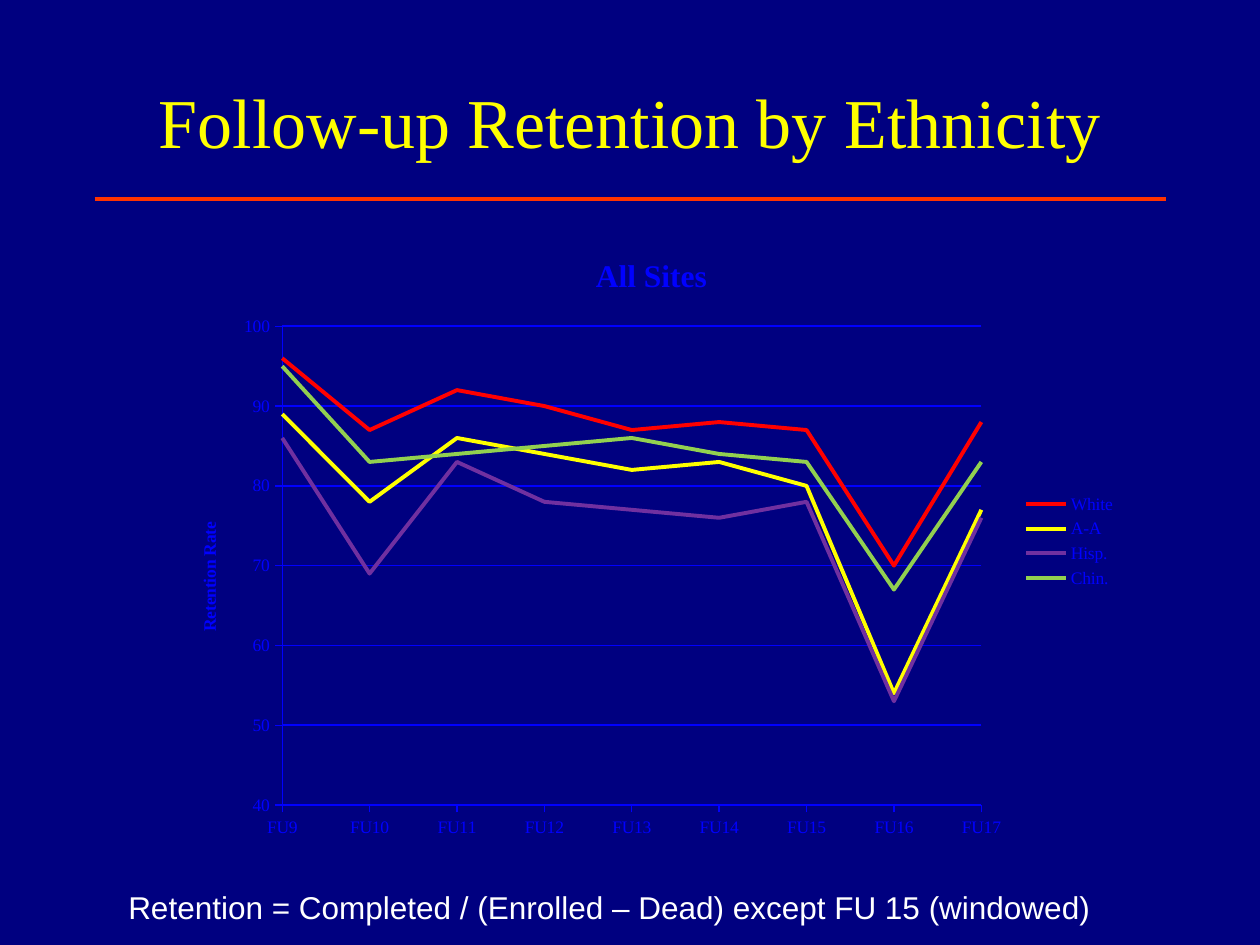
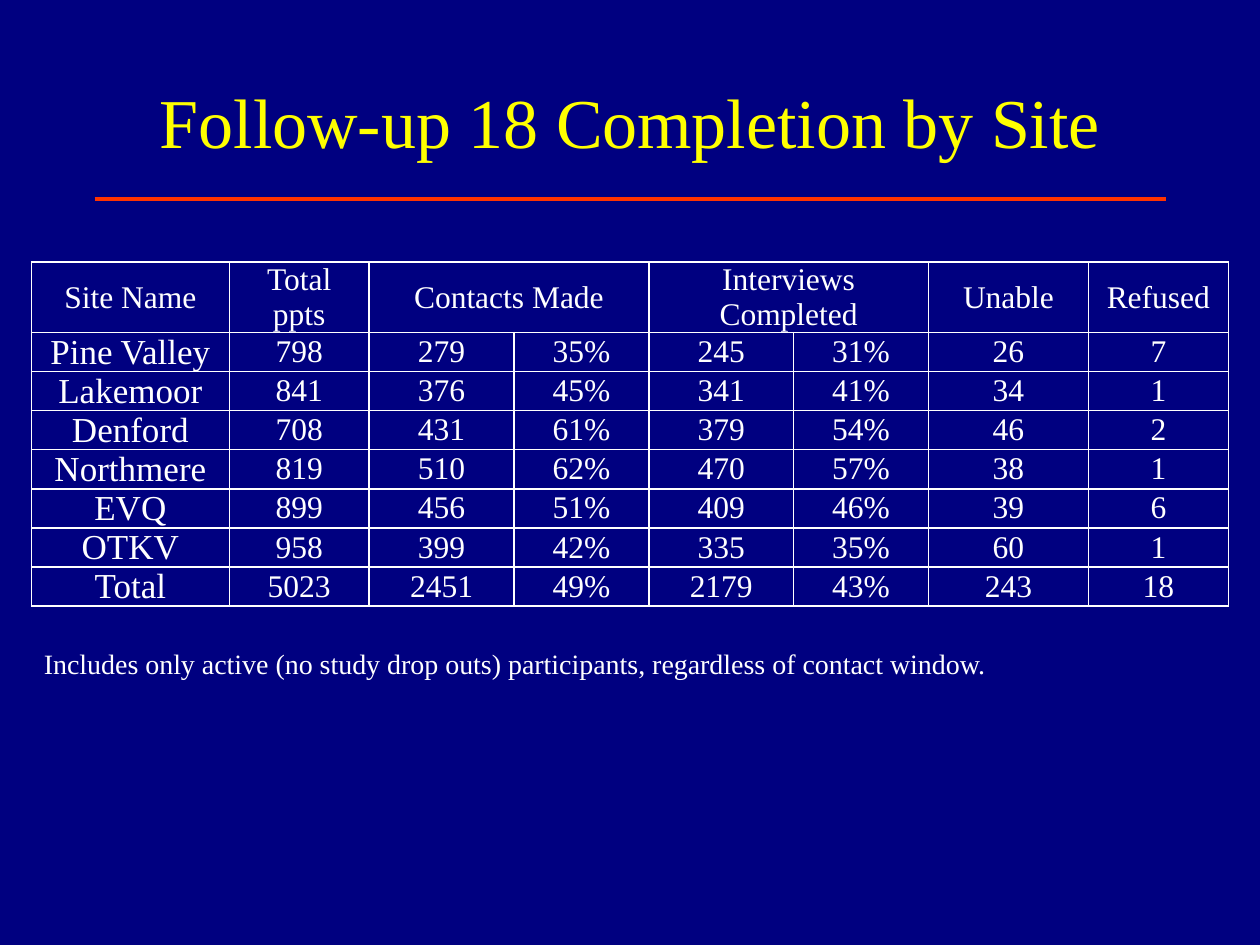
from dataclasses import dataclass

from lxml.etree import SubElement
from pptx import Presentation
from pptx.chart.data import CategoryChartData
from pptx.dml.color import RGBColor as RGB
from pptx.enum.chart import XL_CHART_TYPE as ChartType
from pptx.enum.chart import XL_LEGEND_POSITION as LegendPosition
from pptx.enum.chart import XL_TICK_MARK as TickMark
from pptx.enum.shapes import MSO_CONNECTOR as Connector
from pptx.enum.text import MSO_ANCHOR as Anchor
from pptx.enum.text import PP_ALIGN as Align
from pptx.oxml import parse_xml
from pptx.oxml.ns import nsdecls, qn
from pptx.util import Inches, Pt


@dataclass(frozen=True)
class Theme:
    """Colours, fonts and type sizes of the deck."""

    background: RGB = RGB.from_string("000080")
    title: RGB = RGB.from_string("FFFF00")
    rule: RGB = RGB.from_string("FF3300")
    text: RGB = RGB.from_string("FFFFFF")
    chart: RGB = RGB.from_string("0000FF")
    serif: str = "Times New Roman"
    sans: str = "Arial"
    title_size: int = 40
    site_size: int = 20
    text_size: int = 18
    note_size: int = 16
    label_size: int = 10


THEME = Theme()

CHART_WIDTH, CHART_HEIGHT = 7.58, 4.91
VISITS = [f"FU{number}" for number in range(9, 18)]
RETENTION = [
    ("White", "FF0000", (96, 87, 92, 90, 87, 88, 87, 70, 88)),
    ("A-A", "FFFF00", (89, 78, 86, 84, 82, 83, 80, 54, 77)),
    ("Hisp.", "7030A0", (86, 69, 83, 78, 77, 76, 78, 53, 76)),
    ("Chin.", "92D050", (95, 83, 84, 85, 86, 84, 83, 67, 83)),
]

COLUMN_WIDTHS = (1.57, 1.11, 1.15, 1.07, 1.15, 1.07, 1.27, 1.11)
HEADER_HEIGHT, ROW_HEIGHT = 0.56, 0.31
HEADERS = ("Site Name", "Total ppts", "Contacts Made", "", "Interviews Completed", "", "Unable", "Refused")
SITES = [
    ("Pine Valley", "798", "279", "35%", "245", "31%", "26", "7"),
    ("Lakemoor", "841", "376", "45%", "341", "41%", "34", "1"),
    ("Denford", "708", "431", "61%", "379", "54%", "46", "2"),
    ("Northmere", "819", "510", "62%", "470", "57%", "38", "1"),
    ("EVQ", "899", "456", "51%", "409", "46%", "39", "6"),
    ("OTKV", "958", "399", "42%", "335", "35%", "60", "1"),
    ("Total", "5023", "2451", "49%", "2179", "43%", "243", "18"),
]


def style_font(font, size, color=THEME.text, name=THEME.serif, bold=False):
    """Set the face, size, colour and weight of a font."""
    font.name, font.size, font.bold = name, Pt(size), bold
    font.color.rgb = color


def write(frame, text, align=Align.LEFT, **font_format):
    """Put one formatted paragraph into a text frame."""
    para = frame.paragraphs[0]
    para.alignment = align
    span = para.add_run()
    span.text = text
    style_font(span.font, **font_format)


def style_line(line, color, width):
    """Set the colour and width of a line."""
    line.color.rgb = color
    line.width = Pt(width)


def add_page(deck, title):
    """Add a page with its title and the rule under it."""
    page = deck.slides.add_slide(deck.slide_layouts.get_by_name("Title Only"))
    box = page.shapes.title
    box.left, box.top, box.width, box.height = map(Inches, (0.75, 0.33, 8.5, 1.25))
    box.text_frame.vertical_anchor = Anchor.MIDDLE
    write(box.text_frame, title, align=Align.CENTER, size=THEME.title_size, color=THEME.title)
    rule = page.shapes.add_connector(Connector.STRAIGHT, *map(Inches, (0.75, 1.58, 9.25, 1.58)))
    style_line(rule.line, THEME.rule, 2)
    SubElement(rule.element.spPr, qn("a:effectLst"))
    return page


def add_note(page, text, left, top, width, height, **font_format):
    """Add a wrapped line of explanation."""
    box = page.shapes.add_textbox(*map(Inches, (left, top, width, height)))
    box.text_frame.word_wrap = True
    write(box.text_frame, text, **font_format)


def style_axis(axis):
    """Give an axis outward ticks and a coloured line."""
    axis.major_tick_mark, axis.minor_tick_mark = TickMark.OUTSIDE, TickMark.NONE
    style_line(axis.format.line, THEME.chart, 0.75)


def place_plot(chart, left, top, width, height):
    """Fix the inner plot area, in inches from the chart's corner."""
    plot_area = chart.element.find(".//" + qn("c:plotArea"))
    for old in plot_area.findall(qn("c:layout")):
        plot_area.remove(old)
    fractions = {"x": left / CHART_WIDTH, "y": top / CHART_HEIGHT,
                 "w": width / CHART_WIDTH, "h": height / CHART_HEIGHT}
    sizes = "".join(f'<c:{key} val="{value}"/>' for key, value in fractions.items())
    plot_area.insert(0, parse_xml(
        f'<c:layout {nsdecls("c")}><c:manualLayout><c:layoutTarget val="inner"/>'
        f'<c:xMode val="edge"/><c:yMode val="edge"/>{sizes}</c:manualLayout></c:layout>'))


def start_lines_on_axis(chart):
    """Let the first category sit on the value axis."""
    axis = chart.value_axis._element
    for old in axis.findall(qn("c:crossBetween")):
        axis.remove(old)
    axis.find(qn("c:crosses")).addnext(parse_xml(f'<c:crossBetween {nsdecls("c")} val="midCat"/>'))


def add_retention_chart(page):
    """Add the line chart of retention by ethnicity."""
    data = CategoryChartData()
    data.categories = VISITS
    for name, _, rates in RETENTION:
        data.add_series(name, rates)
    place = map(Inches, (1.38, 1.84, CHART_WIDTH, CHART_HEIGHT))
    chart = page.shapes.add_chart(ChartType.LINE, *place, data).chart
    style_font(chart.font, THEME.label_size, THEME.chart)
    chart.has_title = True
    write(chart.chart_title.text_frame, "All Sites", align=Align.CENTER,
          size=THEME.text_size, color=THEME.chart, bold=True)
    chart.has_legend = True
    chart.legend.position = LegendPosition.RIGHT
    chart.legend.include_in_layout = False

    rates_axis = chart.value_axis
    rates_axis.minimum_scale, rates_axis.maximum_scale, rates_axis.major_unit = 40, 100, 10
    rates_axis.has_major_gridlines = True
    style_line(rates_axis.major_gridlines.format.line, THEME.chart, 1)
    write(rates_axis.axis_title.text_frame, "Retention Rate", align=Align.CENTER,
          size=THEME.label_size, color=THEME.chart, bold=True)
    for axis in (chart.category_axis, rates_axis):
        style_axis(axis)
    start_lines_on_axis(chart)
    place_plot(chart, 0.86, 0.75, 5.55, 3.8)

    plot = chart.plots[0]
    plot.vary_by_categories = False
    for series, (_, color, _) in zip(plot.series, RETENTION):
        series.smooth = False
        style_line(series.format.line, RGB.from_string(color), 2.25)


def style_cell(cell):
    """Give a cell thin borders, no fill and tight margins."""
    properties = cell._tc.get_or_add_tcPr()
    for side in "LRTB":
        properties.append(parse_xml(
            f'<a:ln{side} {nsdecls("a")} w="{Pt(1)}"><a:solidFill>'
            f'<a:srgbClr val="{THEME.text}"/></a:solidFill></a:ln{side}>'))
    cell.fill.background()
    cell.margin_left = cell.margin_right = Inches(0.07)
    cell.margin_top = cell.margin_bottom = 0
    cell.vertical_anchor = Anchor.MIDDLE


def add_completion_table(page):
    """Add the table of contacts and interviews by site."""
    rows = [HEADERS, *SITES]
    heights = [HEADER_HEIGHT] + [ROW_HEIGHT] * len(SITES)
    place = map(Inches, (0.25, 2.08, sum(COLUMN_WIDTHS), sum(heights)))
    table = page.shapes.add_table(len(rows), len(HEADERS), *place).table
    table.first_row = table.horz_banding = False
    for column, width in zip(table.columns, COLUMN_WIDTHS):
        column.width = Inches(width)
    for row, height in zip(table.rows, heights):
        row.height = Inches(height)
    for row_index, texts in enumerate(rows):
        for column_index, text in enumerate(texts):
            cell = table.cell(row_index, column_index)
            style_cell(cell)
            is_site = row_index > 0 and column_index == 0
            if text:
                write(cell.text_frame, text, align=Align.CENTER,
                      size=THEME.site_size if is_site else THEME.text_size)
    for first in (2, 4):
        table.cell(0, first).merge(table.cell(0, first + 1))


def main():
    """Build and save the deck."""
    deck = Presentation()
    deck.slide_width, deck.slide_height = Inches(10), Inches(7.5)
    fill = deck.slide_master.background.fill
    fill.solid()
    fill.fore_color.rgb = THEME.background

    page = add_page(deck, "Follow-up Retention by Ethnicity")
    add_note(page, "Retention = Completed / (Enrolled – Dead) except FU 15 (windowed)",
             0.92, 7, 8.5, 0.4, size=THEME.text_size, name=THEME.sans)
    add_retention_chart(page)

    page = add_page(deck, "Follow-up 18 Completion by Site")
    add_completion_table(page)
    add_note(page, "Includes only active (no study drop outs) participants, regardless of contact window.",
             0.25, 5.08, 9.5, 0.37, size=THEME.note_size)

    deck.save("out.pptx")


if __name__ == "__main__":
    main()
